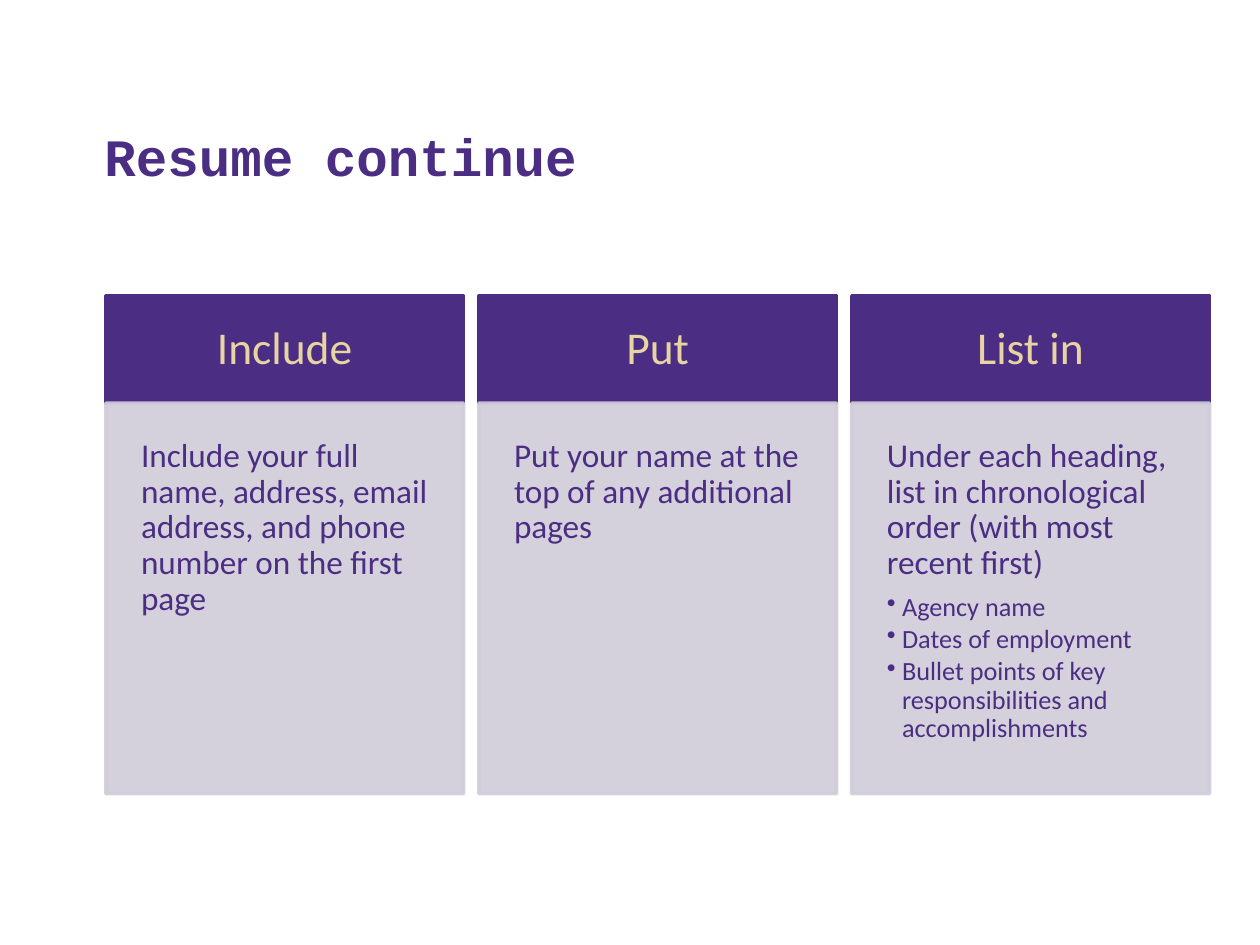
import pptx
import pptx.util
import pptx.dml.color
import pptx.enum.shapes
import pptx.enum.text
import pptx.oxml.ns
import lxml.etree

Inches = pptx.util.Inches
Pt = pptx.util.Pt
ALIGN = pptx.enum.text.PP_ALIGN
ANCHOR = pptx.enum.text.MSO_ANCHOR
qn = pptx.oxml.ns.qn

COLORS = {"purple": "4B2E83", "gold": "E8D3A2", "lilac": "D0CDD9"}

COLUMNS = [
    ("Include",
     "Include your full name, address, email address, and phone number on the first page", []),
    ("Put", "Put your name at the top of any additional pages", []),
    ("List in",
     "Under each heading, list in chronological order (with most recent first)",
     ["Agency name", "Dates of employment",
      "Bullet points of key responsibilities and accomplishments"]),
]
LEFT, PITCH, WIDTH = 0.84, 2.96, 2.84
HEADING_TOP, HEADING_HEIGHT = 2.35, 0.85
BODY_TOP, BODY_HEIGHT = 3.2, 3.1


class ResumeSlide:
    """Holds the current slide and the style shared by its elements."""

    def __init__(self, slide, colors):
        self.slide = slide
        self.colors = colors

    def rgb(self, name):
        return pptx.dml.color.RGBColor.from_string(self.colors[name])

    def frame(self, shape, anchor, insets):
        """Set up the text frame; insets are left, top, right, bottom."""
        frame = shape.text_frame
        frame.word_wrap = True
        frame.vertical_anchor = anchor
        (frame.margin_left, frame.margin_top,
         frame.margin_right, frame.margin_bottom) = map(Inches, insets)
        return frame

    def add_text(self, paragraph, text, size, color, font="Calibri", bold=False,
                 align=ALIGN.LEFT, after=0):
        paragraph.alignment = align
        paragraph.line_spacing = 0.9
        paragraph.space_after = Pt(after)
        run = paragraph.add_run()
        run.text = text
        run.font.name = font
        run.font.size = Pt(size)
        run.font.bold = bold
        run.font.color.rgb = self.rgb(color)

    def title(self, text):
        box = self.slide.shapes.add_textbox(
            Inches(0.73), Inches(0.41), Inches(8.88), Inches(1.08))
        frame = self.frame(box, ANCHOR.BOTTOM, (0.1, 0.05, 0.1, 0))
        self.add_text(frame.paragraphs[0], text, 30, "purple", "Courier New", True)

    def panel(self, left, top, height, color, opacity=100):
        panel = self.slide.shapes.add_shape(
            pptx.enum.shapes.MSO_SHAPE.RECTANGLE,
            Inches(left), Inches(top), Inches(WIDTH), Inches(height))
        panel.shadow.inherit = False
        panel.line.width = Pt(2)
        for fill in (panel.fill, panel.line.fill):
            fill.solid()
            fill.fore_color.rgb = self.rgb(color)
        if opacity < 100:
            for tint in panel._element.spPr.iter(qn("a:srgbClr")):
                lxml.etree.SubElement(tint, qn("a:alpha"), val=str(opacity * 1000))
        return panel

    def heading(self, left, text):
        panel = self.panel(left, HEADING_TOP, HEADING_HEIGHT, "purple")
        frame = self.frame(panel, ANCHOR.MIDDLE, [0.22] * 4)
        self.add_text(frame.paragraphs[0], text, 26, "gold", align=ALIGN.CENTER)

    def body(self, left, advice, details):
        panel = self.panel(left, BODY_TOP, BODY_HEIGHT, "lilac", opacity=90)
        frame = self.frame(panel, ANCHOR.TOP, [0.28] * 4)
        self.add_text(frame.paragraphs[0], advice, 19, "purple", after=6.65)
        for detail in details:
            self.bullet(frame.add_paragraph(), detail)

    def bullet(self, paragraph, text):
        paragraph.level = 1
        properties = paragraph._p.get_or_add_pPr()
        properties.set("marL", str(Inches(0.12)))
        properties.set("indent", str(Inches(-0.12)))
        lxml.etree.SubElement(properties, qn("a:buChar"), char="•")
        self.add_text(paragraph, text, 15, "purple", after=2.25)


def main():
    deck = pptx.Presentation()
    deck.slide_width = Inches(10)
    deck.slide_height = Inches(7.5)
    page = ResumeSlide(deck.slides.add_slide(deck.slide_layouts[6]), COLORS)
    page.title("Resume continue")
    for index, (heading, advice, details) in enumerate(COLUMNS):
        left = LEFT + index * PITCH
        page.heading(left, heading)
        page.body(left, advice, details)
    deck.save("out.pptx")


if __name__ == "__main__":
    main()
